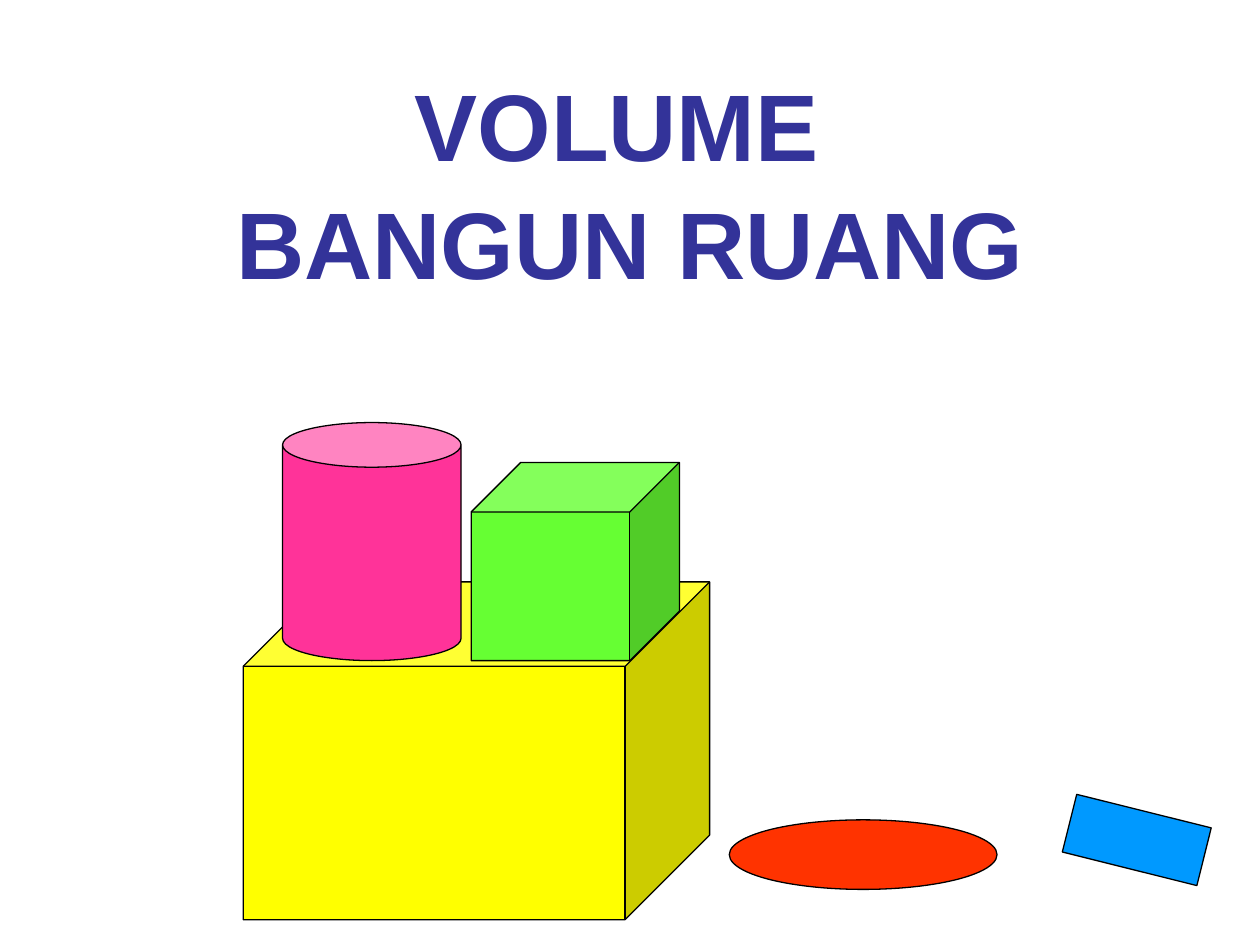
from pptx import Presentation
from pptx import util as u
from pptx.dml.color import RGBColor
from pptx.enum import shapes, text

MSO = shapes.MSO_SHAPE
SOLIDS = [
    (MSO.CUBE, (139, 332.5, 266.5, 193), "FFFF00", 0),
    (MSO.CUBE, (269.25, 264.25, 119, 113.25), "66FF33", 0),
    (MSO.CAN, (161.5, 241.5, 102, 136), "FF3399", 0),
    (MSO.RECTANGLE, (610, 463, 79.25, 34), "0099FF", 14),
    (MSO.OVAL, (416.75, 468.5, 153, 39.75), "FF3300", 0),
]


def color(value):
    return RGBColor.from_string(value)


def apply(obj, formats):
    for name, value in formats.items():
        setattr(obj, name, value)


def place(sp, box):
    names = ("left", "top", "width", "height")
    apply(sp, dict(zip(names, map(u.Pt, box))))


def set_title(s, content, box):
    sp = s.shapes.title
    place(sp, box)
    tf = sp.text_frame
    apply(tf, {"word_wrap": True, "vertical_anchor": text.MSO_ANCHOR.MIDDLE,
               "auto_size": text.MSO_AUTO_SIZE.NONE})
    p = tf.paragraphs[0]
    apply(p, {"text": content, "alignment": text.PP_ALIGN.CENTER,
              "line_spacing": 1.04})
    for r in p.runs:
        apply(r.font, {"name": "Arial", "size": u.Pt(54), "bold": True})
        r.font.color.rgb = color("333399")


def add_solid(s, kind, box, fill, rotation):
    sp = s.shapes.add_shape(kind, *map(u.Pt, box))
    apply(sp, {"rotation": rotation})
    sp.shadow.inherit = False
    sp.fill.solid()
    sp.fill.fore_color.rgb = color(fill)
    sp.line.color.rgb = color("000000")
    sp.line.width = u.Pt(0.75)
    if kind in (MSO.CUBE, MSO.CAN):
        sp.adjustments[0] = 0.25


def main():
    prs = Presentation()
    apply(prs, {"slide_width": u.Pt(720), "slide_height": u.Pt(540)})
    s = prs.slides.add_slide(prs.slide_layouts[5])
    set_title(s, "VOLUME \vBANGUN RUANG", (36, 21.5, 648, 163.5))
    for solid in SOLIDS:
        add_solid(s, *solid)
    prs.save("out.pptx")


if __name__ == "__main__":
    main()
